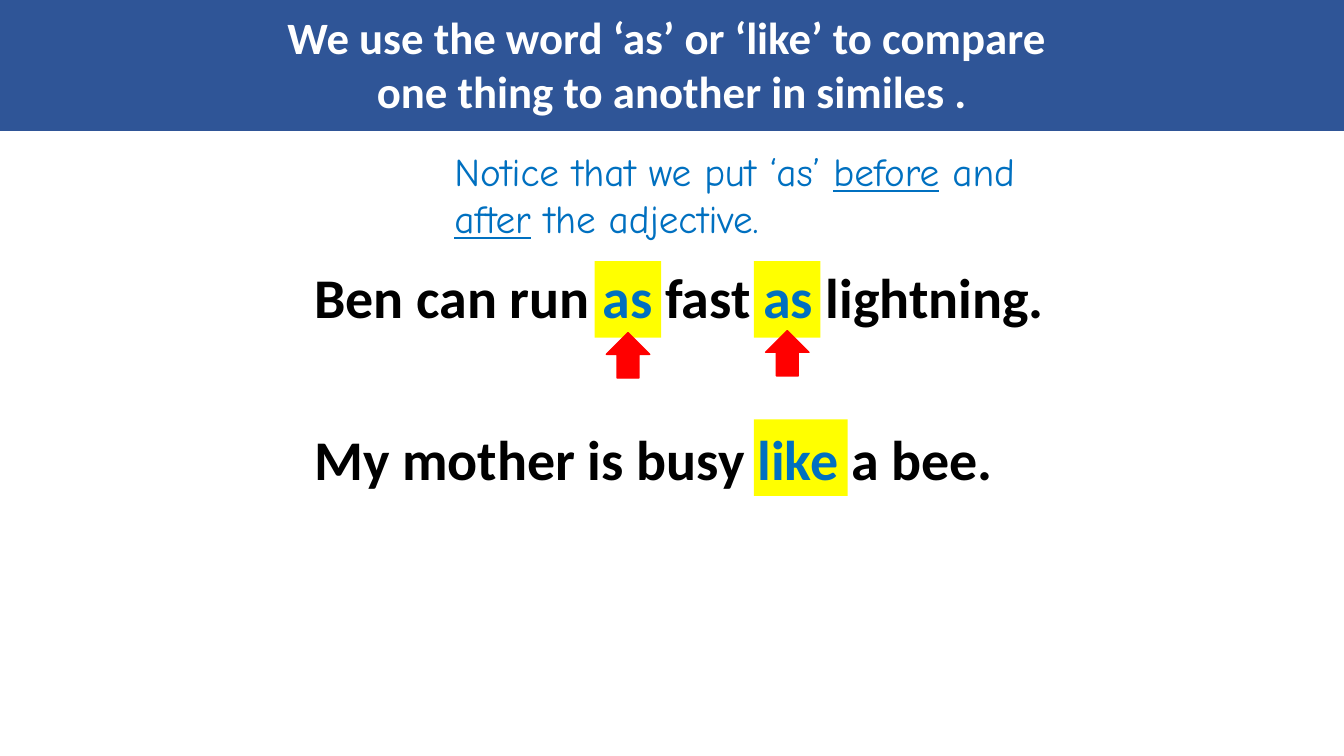
from pptx import Presentation
from pptx.dml.color import RGBColor
from pptx.enum.shapes import MSO_SHAPE
from pptx.enum.text import MSO_ANCHOR, MSO_AUTO_SIZE, PP_ALIGN
from pptx.util import Inches, Pt

COLUMNS, ROWS = 133.33, 75
SLIDE_WIDTH, SLIDE_HEIGHT = Inches(13.33), Inches(7.5)
NAVY, BLUE, BLACK, WHITE = "2F5597", "0070C0", "000000", "FFFFFF"
YELLOW, RED = "FFFF00", "FF0000"


def color(value):
    """Turn a hex string into a colour."""
    return RGBColor.from_string(value)


def grid(left, top, width, height):
    """Turn grid columns and rows into a slide position."""
    column, row = SLIDE_WIDTH / COLUMNS, SLIDE_HEIGHT / ROWS
    return [round(n) for n in (left * column, top * row, width * column, height * row)]


def paint(shape, fill, line=None):
    """Give a shape a solid fill and an optional outline."""
    shape.fill.solid()
    shape.fill.fore_color.rgb = color(fill)
    if line:
        shape.line.color.rgb = color(line)
        shape.line.width = Pt(1)
    else:
        shape.line.fill.background()


def add_shape(page, kind, box, fill, line=None):
    """Draw a flat preset shape."""
    shape = page.shapes.add_shape(kind, *grid(*box))
    shape.shadow.inherit = False
    paint(shape, fill, line)
    return shape


def add_span(para, text, size, ink, face="Calibri", bold=True, underline=False):
    """Append one formatted run."""
    span = para.add_run()
    span.text = text
    font = span.font
    font.name, font.size, font.bold = face, Pt(size), bold
    font.underline = underline
    font.color.rgb = color(ink)


def add_text_box(page, box):
    """Add a wrapping text box and return its paragraph."""
    frame = page.shapes.add_textbox(*grid(*box)).text_frame
    frame.word_wrap = True
    frame.auto_size = MSO_AUTO_SIZE.SHAPE_TO_FIT_TEXT
    return frame.paragraphs[0]


def add_banner(page, box, lines):
    """Turn the title placeholder into the coloured banner."""
    title = page.shapes.title
    title.left, title.top, title.width, title.height = grid(*box)
    paint(title, NAVY, NAVY)
    frame = title.text_frame
    frame.word_wrap = True
    frame.auto_size = MSO_AUTO_SIZE.NONE
    frame.vertical_anchor = MSO_ANCHOR.MIDDLE
    para = frame.paragraphs[0]
    para.alignment = PP_ALIGN.CENTER
    for index, line in enumerate(lines):
        if index:
            para.add_line_break()
        add_span(para, line, 32, WHITE)


def add_note(page, box, parts):
    """Write the hint, underlining every second part."""
    para = add_text_box(page, box)
    for index, part in enumerate(parts):
        add_span(para, part, 28, BLUE, "Comic Neue", False, index % 2 == 1)


def add_sentence(page, box, parts, marks, mark_drop=0, arrow_drops=()):
    """Write an example over its highlights, with arrows below them."""
    left, top, width, height = box
    for offset, mark_width in marks:
        mark_box = left + offset, top + mark_drop, mark_width, 7.6
        add_shape(page, MSO_SHAPE.RECTANGLE, mark_box, YELLOW)
    para = add_text_box(page, box)
    for index, part in enumerate(parts):
        add_span(para, part, 40, BLUE if index % 2 else BLACK)
    for (offset, mark_width), drop in zip(marks, arrow_drops):
        arrow_left = left + offset + (mark_width - 4.3) / 2
        arrow_box = arrow_left, top + drop, 4.3, 4.5
        arrow = add_shape(page, MSO_SHAPE.DOWN_ARROW, arrow_box, RED, RED)
        arrow.rotation = 180


def build_simile_slide(deck):
    """Build the slide that explains similes."""
    page = deck.slides.add_slide(deck.slide_layouts[5])
    add_banner(page, (0, -0.3, COLUMNS, 13.2), [
        "We use the word ‘as’ or ‘like’ to compare ",
        "one thing to another in similes ."])
    add_note(page, (44.1, 14.1, 58.7, 10.4), [
        "Notice that we put ‘as’ ", "before", " and ", "after", " the adjective."])
    add_sentence(page, (30.2, 25.6, 77.3, 7.7),
                 ["Ben can run ", "as", " fast ", "as", " lightning."],
                 [(28.8, 6.6), (44.6, 6.6)], 0.3, (7.4, 7.2))
    add_sentence(page, (30.2, 41.6, 77.3, 7.7),
                 ["My mother is busy ", "like", " a bee."], [(44.6, 9.3)])


def main():
    """Create and save the deck."""
    deck = Presentation()
    deck.slide_width, deck.slide_height = SLIDE_WIDTH, SLIDE_HEIGHT
    build_simile_slide(deck)
    deck.save("out.pptx")


if __name__ == "__main__":
    main()
